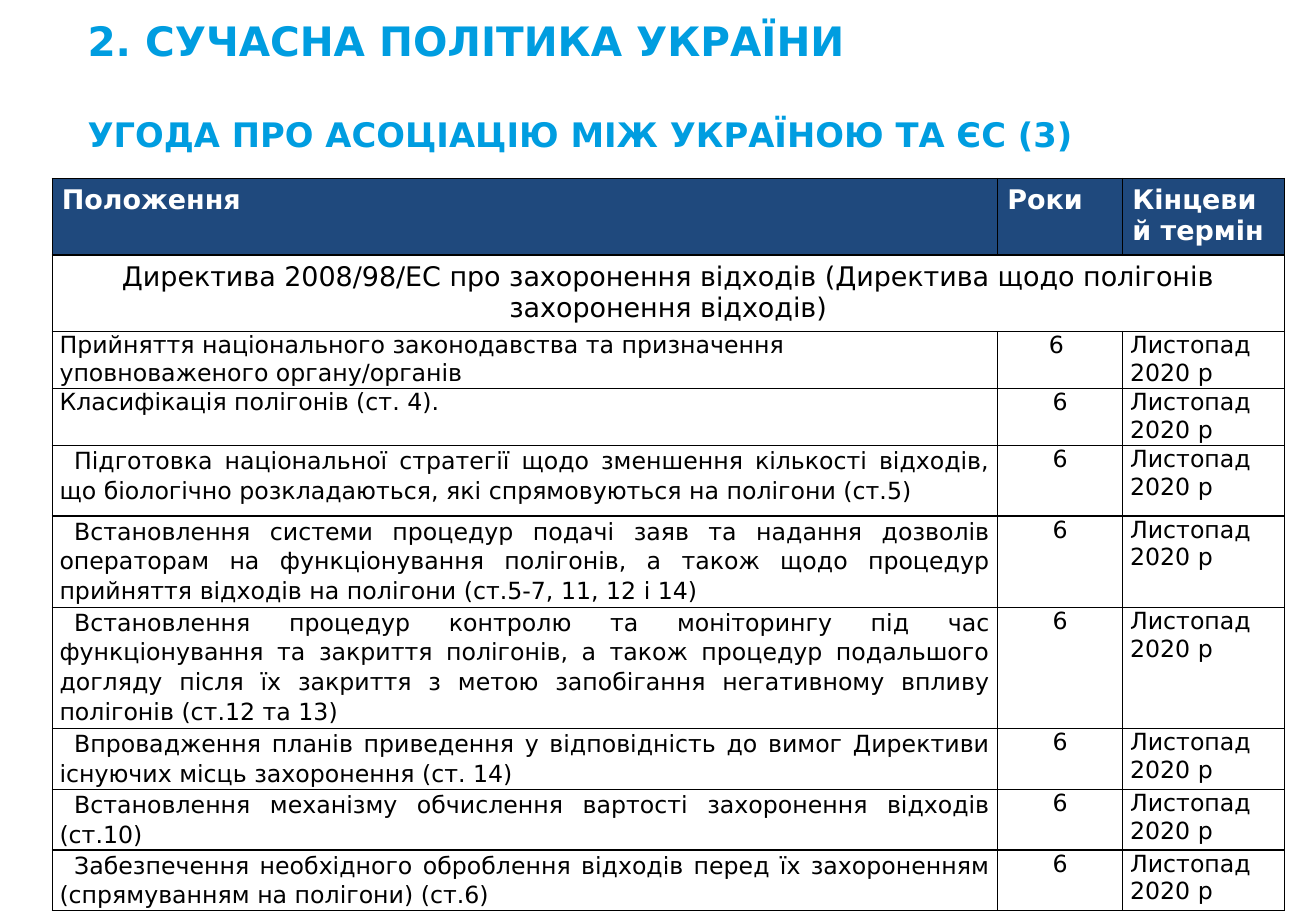
import pptx
import pptx.dml.color
import pptx.enum.text
import pptx.oxml
import pptx.oxml.ns
import pptx.util

ALIGN = pptx.enum.text.PP_ALIGN
ANCHOR = pptx.enum.text.MSO_ANCHOR
COLORS = {"heading": "009DE0", "header": "1F497D", "paper": "FFFFFF", "ink": "000000"}
GRID_COLUMNS, GRID_ROWS = 108.3, 75
DEADLINE = "Листопад 2020 р"

HEADERS = ["Положення", "Роки", "Кінцевий термін"]
DIRECTIVE = ("Директива 2008/98/ЕС про захоронення відходів "
             "(Директива щодо полігонів захоронення відходів)")
SHORT_PROVISIONS = [
    ("Прийняття національного законодавства та призначення "
     "уповноваженого органу/органів", "6 "),
    ("Класифікація полігонів (ст. 4).", "6"),
]
LONG_PROVISIONS = [
    "Підготовка національної стратегії щодо зменшення кількості відходів, "
    "що біологічно розкладаються, які спрямовуються на полігони (ст.5)",
    "Встановлення системи процедур подачі заяв та надання дозволів операторам "
    "на функціонування полігонів, а також щодо процедур прийняття відходів "
    "на полігони (ст.5-7, 11, 12 і 14)",
    "Встановлення процедур контролю та моніторингу під час функціонування та "
    "закриття полігонів, а також процедур подальшого догляду після їх закриття "
    "з метою запобігання негативному впливу полігонів (ст.12 та 13)",
    "Впровадження планів приведення у відповідність до вимог Директиви "
    "існуючих місць захоронення (ст. 14)",
    "Встановлення механізму обчислення вартості захоронення відходів (ст.10)",
    "Забезпечення необхідного оброблення відходів перед їх захороненням "
    "(спрямуванням на полігони) (ст.6)",
]
COLUMN_WIDTHS = [77.8, 10.3, 13.3]
ROW_HEIGHTS = [6.3, 6.3, 4.7, 4.7, 5.8, 7.5, 10, 5, 5, 5]


class PolicySlide:
    font = "DejaVu Sans"

    def __init__(self, deck):
        self.column = deck.slide_width / GRID_COLUMNS
        self.row = deck.slide_height / GRID_ROWS
        self.slide = deck.slides.add_slide(deck.slide_layouts[5])

    def across(self, columns):
        return round(columns * self.column)

    def down(self, rows):
        return round(rows * self.row)

    def box(self, left, top, width, height):
        return self.across(left), self.down(top), self.across(width), self.down(height)

    def add_text(self, paragraph, wording, size, color, bold=False, align=ALIGN.LEFT):
        paragraph.alignment = align
        run = paragraph.add_run()
        run.text = wording
        run.font.name = self.font
        run.font.size = pptx.util.Pt(size)
        run.font.bold = bold
        run.font.color.rgb = pptx.dml.color.RGBColor.from_string(COLORS[color])

    def title(self, box, lines, gap):
        heading = self.slide.shapes.title
        heading.left, heading.top, heading.width, heading.height = self.box(*box)
        frame = heading.text_frame
        frame.margin_left = frame.margin_right = frame.margin_top = frame.margin_bottom = 0
        frame.vertical_anchor = ANCHOR.MIDDLE
        frame.auto_size = pptx.enum.text.MSO_AUTO_SIZE.NONE
        frame.word_wrap = True
        for index, (wording, size) in enumerate(lines):
            paragraph = frame.add_paragraph() if index else frame.paragraphs[0]
            paragraph.space_before = pptx.util.Pt(gap if index else 0)
            paragraph.line_spacing = 1.0
            self.add_text(paragraph, wording, size, "heading", True)

    def table(self, left, top, widths, heights):
        box = self.box(left, top, sum(widths), sum(heights))
        table = self.slide.shapes.add_table(len(heights), len(widths), *box).table
        table.first_row = table.horz_banding = False
        for column, width in zip(table.columns, widths):
            column.width = self.across(width)
        for row, height in zip(table.rows, heights):
            row.height = self.down(height)
        for cell in table.iter_cells():
            self.border(cell)
            self.fill(cell, "paper")
        return table

    def border(self, cell):
        properties = cell._tc.get_or_add_tcPr()
        for side in ("lnL", "lnR", "lnT", "lnB"):
            properties.append(pptx.oxml.parse_xml(
                f'<a:{side} {pptx.oxml.ns.nsdecls("a")} w="{pptx.util.Pt(1)}">'
                f'<a:solidFill><a:srgbClr val="{COLORS["ink"]}"/></a:solidFill></a:{side}>'))

    def fill(self, cell, color):
        cell.fill.solid()
        cell.fill.fore_color.rgb = pptx.dml.color.RGBColor.from_string(COLORS[color])

    def cell(self, cell, wording, size, color="ink", bold=False, align=ALIGN.LEFT,
             side=0.6, edge=0):
        cell.margin_left = cell.margin_right = self.across(side)
        cell.margin_top = cell.margin_bottom = self.down(edge)
        paragraph = cell.text_frame.paragraphs[0]
        self.add_text(paragraph, wording, size, color, bold, align)
        if align == ALIGN.JUSTIFY:
            paragraph.line_spacing = 1.07
            paragraph._p.get_or_add_pPr().set("indent", str(self.across(1.2)))


def main():
    deck = pptx.Presentation()
    deck.slide_width = pptx.util.Inches(10.83)
    deck.slide_height = pptx.util.Inches(7.5)
    policy = PolicySlide(deck)
    policy.title((7.2, 1.3, 93.4, 11.4), [
        ("2. СУЧАСНА ПОЛІТИКА УКРАЇНИ", 24),
        ("УГОДА ПРО АСОЦІАЦІЮ МІЖ УКРАЇНОЮ ТА ЄС (3)", 20),
    ], gap=29)

    agreement = policy.table(4.3, 14.7, COLUMN_WIDTHS, ROW_HEIGHTS)
    for index, header in enumerate(HEADERS):
        header_cell = agreement.cell(0, index)
        policy.fill(header_cell, "header")
        policy.cell(header_cell, header, 16, "paper", True, side=0.8, edge=0.5)

    directive = agreement.cell(1, 0)
    directive.merge(agreement.cell(1, 2))
    policy.cell(directive, DIRECTIVE, 16, align=ALIGN.CENTER, side=0.8, edge=0.5)

    provisions = [(wording, years, ALIGN.LEFT) for wording, years in SHORT_PROVISIONS]
    provisions += [(wording, "6", ALIGN.JUSTIFY) for wording in LONG_PROVISIONS]
    for index, (provision, years, align) in enumerate(provisions, start=2):
        policy.cell(agreement.cell(index, 0), provision, 14, align=align)
        policy.cell(agreement.cell(index, 1), years, 14, align=ALIGN.CENTER)
        policy.cell(agreement.cell(index, 2), DEADLINE, 14)

    deck.save("out.pptx")


if __name__ == "__main__":
    main()
